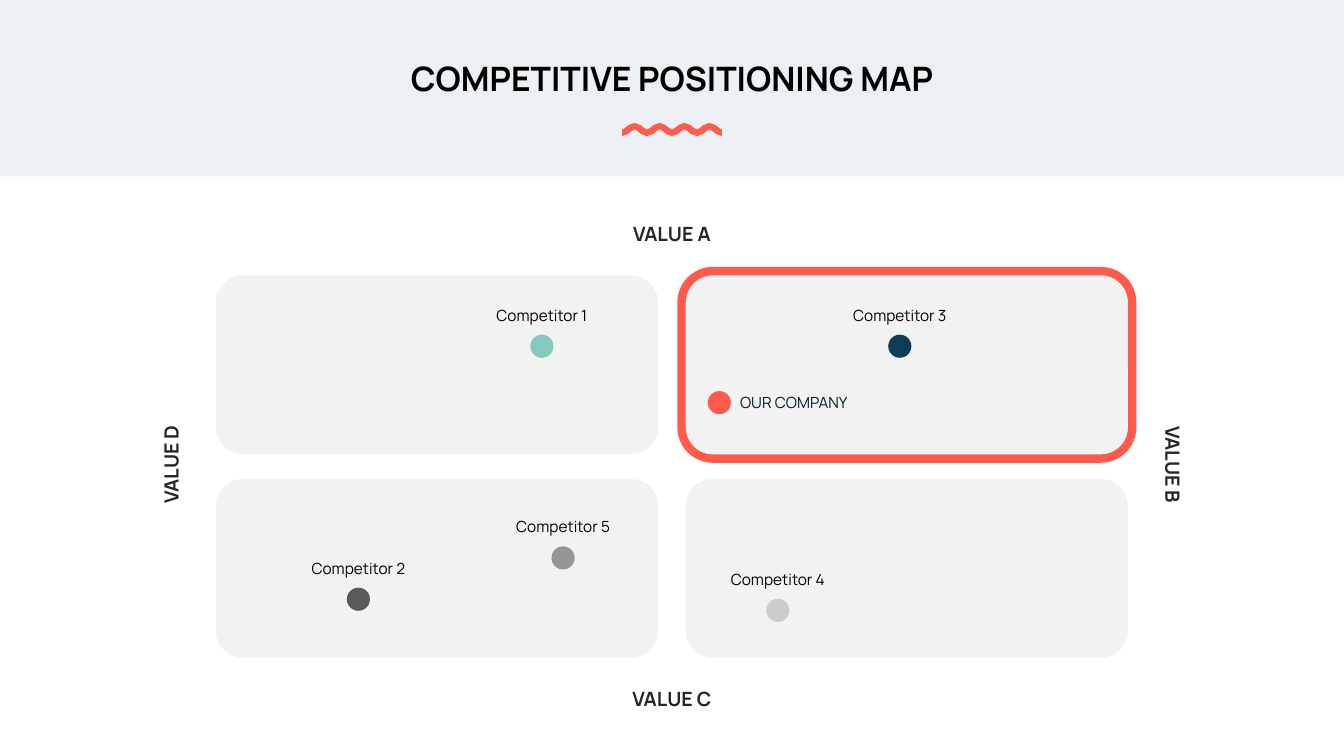
from math import atan, cos, pi, sin

from pptx import Presentation
from pptx.dml.color import RGBColor
from pptx.enum.shapes import MSO_SHAPE
from pptx.enum.text import MSO_ANCHOR, MSO_AUTO_SIZE, PP_ALIGN
from pptx.util import Pt

PX = 9144  # EMU per px, 100 px to the inch
FONT = "Manrope"
ROUNDED, OVAL = MSO_SHAPE.ROUNDED_RECTANGLE, MSO_SHAPE.OVAL
CENTER, LEFT = PP_ALIGN.CENTER, PP_ALIGN.LEFT
TOP, MIDDLE = MSO_ANCHOR.TOP, MSO_ANCHOR.MIDDLE

BLACK = RGBColor(0x00, 0x00, 0x00)
WHITE = RGBColor(0xFF, 0xFF, 0xFF)
BACKDROP = RGBColor(0xEC, 0xF0, 0xF2)
QUADRANT_GRAY = RGBColor(0xF2, 0xF2, 0xF2)
AXIS_GRAY = RGBColor(0x26, 0x26, 0x26)
CORAL = RGBColor(0xFF, 0x5B, 0x4C)
INK = RGBColor(0x05, 0x1E, 0x2A)
TEAL = RGBColor(0x85, 0xC8, 0xBD)
NAVY = RGBColor(0x0C, 0x3D, 0x54)
DARK_GRAY = RGBColor(0x59, 0x59, 0x59)
MID_GRAY = RGBColor(0x95, 0x95, 0x95)
LIGHT_GRAY = RGBColor(0xCB, 0xCB, 0xCB)

# Content
TITLE = "COMPETITIVE POSITIONING MAP"
AXIS_VALUES = [  # text, left, top, rotation
    ("VALUE A", 583, 220, 0),
    ("VALUE C", 583, 681, 0),
    ("VALUE D", 86, 449, 270),
    ("VALUE B", 1080, 449, 90),
]
COMPETITORS = [  # name, dot left, dot top, dot colour
    ("Competitor 1", 526, 332, TEAL),
    ("Competitor 2", 344, 583, DARK_GRAY),
    ("Competitor 3", 881, 332, NAVY),
    ("Competitor 4", 760, 594, LIGHT_GRAY),
    ("Competitor 5", 547, 542, MID_GRAY),
]
OUR_COMPANY = ("OUR COMPANY", 702, 388, CORAL)

# Layout
SLIDE_W, SLIDE_H, HEADER_H = 1333, 750, 175
QUADRANT_LEFT, QUADRANT_TOP, QUADRANT_W, QUADRANT_H = 210, 269, 447, 186
COLUMN_STEP, ROW_STEP = 466, 202
HIGHLIGHTED = (1, 0)  # column, row
AXIS_W, AXIS_H = 167, 24
DOT, LABEL_W, LABEL_H, LABEL_RISE = 23, 149, 19, 29
WAVE_LEFT, WAVE_MIDDLE, WAVE_W, WAVE_CYCLES = 617, 128.5, 99, 4
WAVE_AMPLITUDE, WAVE_HALF_THICKNESS, WAVE_STEPS = 3.3, 3.3, 24

prs = Presentation()
prs.slide_width, prs.slide_height = SLIDE_W * PX, SLIDE_H * PX
slide = prs.slides.add_slide(prs.slide_layouts[5])
slide.background.fill.solid()
slide.background.fill.fore_color.rgb = BACKDROP


def paint(shape, fill, line=None):
    shape.shadow.inherit = False
    shape.fill.solid()
    shape.fill.fore_color.rgb = fill
    if line is None:
        shape.line.fill.background()
    else:
        shape.line.color.rgb = line
        shape.line.width = Pt(6)


def add_block(kind, left, top, width, height, fill, line=None):
    block = slide.shapes.add_shape(kind, left * PX, top * PX, width * PX, height * PX)
    paint(block, fill, line)
    return block


def write(holder, text, size, color, bold=False, align=CENTER, anchor=MIDDLE, inset=0):
    frame = holder.text_frame
    frame.word_wrap = True
    frame.auto_size = MSO_AUTO_SIZE.NONE
    frame.vertical_anchor = anchor
    frame.margin_left = frame.margin_right = inset * PX
    frame.margin_top = frame.margin_bottom = inset * PX
    paragraph = frame.paragraphs[0]
    paragraph.text = text
    paragraph.alignment = align
    font = paragraph.font
    font.name, font.size, font.bold = FONT, Pt(size), bold
    font.color.rgb = color


def add_label(left, top, width, height, *text_args, **text_options):
    label = slide.shapes.add_textbox(left * PX, top * PX, width * PX, height * PX)
    write(label, *text_args, **text_options)
    return label


def wave_edge(side):
    """Points along one edge of the wave, offset along its normal."""
    frequency = 2 * pi * WAVE_CYCLES / WAVE_W
    points = []
    for step in range(WAVE_STEPS + 1):
        x = WAVE_W * step / WAVE_STEPS
        angle = atan(-WAVE_AMPLITUDE * frequency * sin(frequency * x))
        y = WAVE_AMPLITUDE * cos(frequency * x)
        offset = side * WAVE_HALF_THICKNESS
        points.append(((WAVE_LEFT + x - offset * sin(angle)) * PX,
                       (WAVE_MIDDLE + y + offset * cos(angle)) * PX))
    return points


# Title and wave underline
title = slide.shapes.title
title.left, title.top, title.width, title.height = 277 * PX, 54 * PX, 779 * PX, 46 * PX
write(title, TITLE, 24, BLACK, bold=True, anchor=TOP, inset=3)

outline = wave_edge(-1) + wave_edge(1)[::-1]
builder = slide.shapes.build_freeform(*outline[0])
builder.add_line_segments(outline[1:], close=True)
paint(builder.convert_to_shape(), CORAL)

# White panel
panel = add_block(ROUNDED, 0, HEADER_H, SLIDE_W, SLIDE_H - HEADER_H, WHITE)
panel.adjustments[0] = 0

# Quadrants
for column in range(2):
    for row in range(2):
        border = CORAL if (column, row) == HIGHLIGHTED else WHITE
        add_block(ROUNDED, QUADRANT_LEFT + column * COLUMN_STEP,
                  QUADRANT_TOP + row * ROW_STEP, QUADRANT_W, QUADRANT_H,
                  QUADRANT_GRAY, border)

# Axis values
for text, left, top, rotation in AXIS_VALUES:
    axis_value = add_label(left, top, AXIS_W, AXIS_H, text, 14, AXIS_GRAY, bold=True)
    axis_value.rotation = rotation

# Competitors: name centred above its dot
for name, left, top, color in COMPETITORS:
    add_label(left - (LABEL_W - DOT) // 2, top - LABEL_RISE, LABEL_W, LABEL_H,
              name, 11, BLACK)
    add_block(OVAL, left, top, DOT, DOT, color)

# Our company: name to the right of its dot
name, left, top, color = OUR_COMPANY
add_label(left + 32, top + 2, LABEL_W, LABEL_H, name, 11, INK, align=LEFT)
add_block(OVAL, left, top, DOT, DOT, color)

prs.save("out.pptx")
